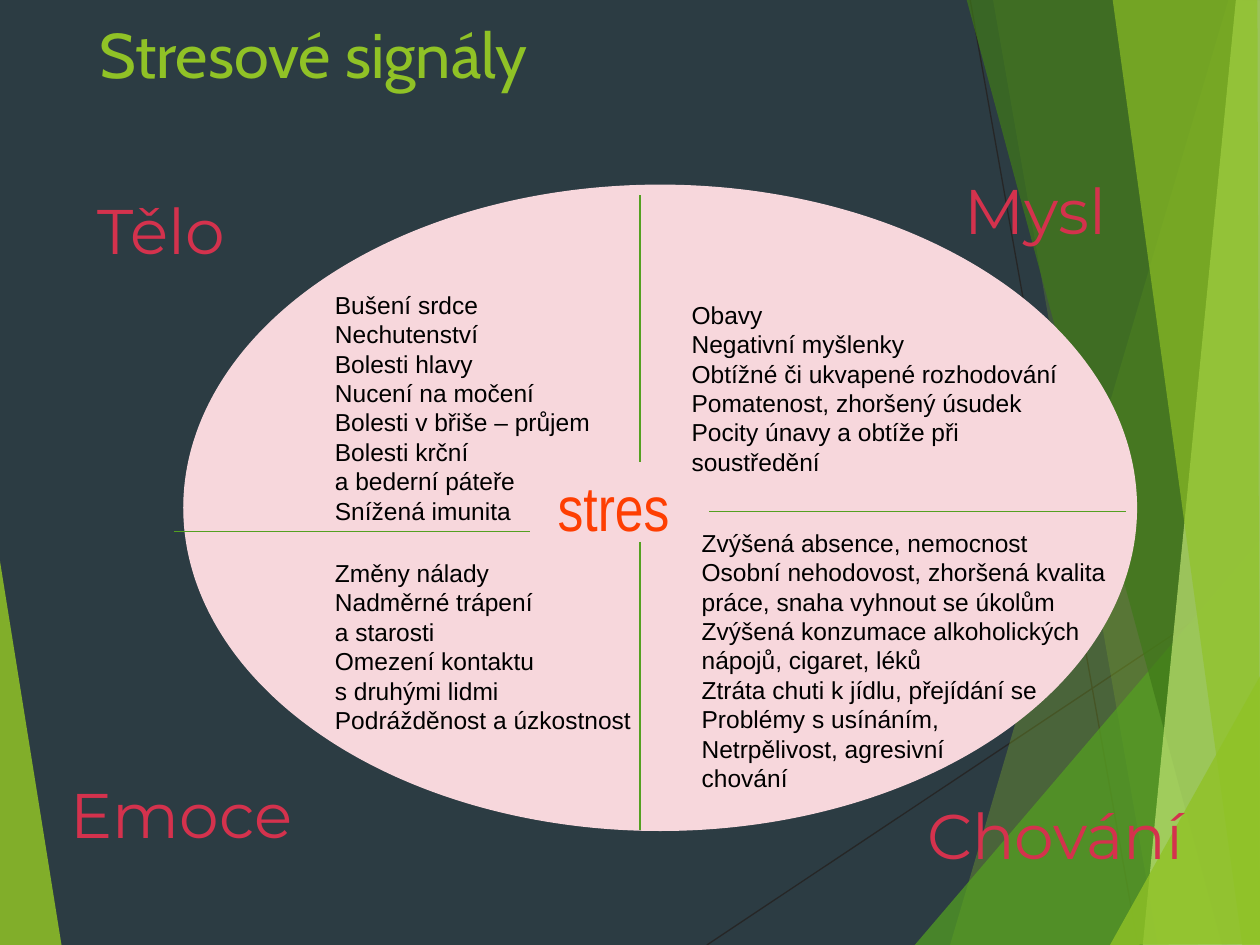
from lxml.etree import SubElement
from pptx import Presentation
from pptx.dml.color import RGBColor
from pptx.enum.shapes import MSO_CONNECTOR, MSO_SHAPE
from pptx.enum.text import MSO_ANCHOR, MSO_AUTO_SIZE, PP_ALIGN
from pptx.oxml.ns import qn
from pptx.util import Inches, Pt


def color(value):
    return RGBColor.from_string(value)


def add_text(text, left, top, width, height, font="Arial", size=14, fill="000000",
             align=PP_ALIGN.LEFT, wrap=False, grow=False):
    """Add a text box with one paragraph for each line of text."""
    box = page.shapes.add_textbox(Inches(left), Inches(top), Inches(width), Inches(height))
    frame = box.text_frame
    frame.word_wrap = wrap
    frame.vertical_anchor = MSO_ANCHOR.TOP
    frame.auto_size = MSO_AUTO_SIZE.SHAPE_TO_FIT_TEXT if grow else MSO_AUTO_SIZE.NONE
    frame.text = text
    for para in frame.paragraphs:
        para.alignment = align
        for span in para.runs:
            span.font.name = font
            span.font.size = Pt(size)
            span.font.color.rgb = color(fill)


deck = Presentation()
deck.slide_width = Inches(10)
deck.slide_height = Inches(7.5)
page = deck.slides.add_slide(deck.slide_layouts[6])
page.background.fill.solid()
page.background.fill.fore_color.rgb = color("2C3C43")

# Each line: start x, start y, end x, end y, colour
background_lines = [
    (5.61, 7.5, 10.01, 4.57, "262626"),
    (7.7, 0, 9.03, 7.5, "262626"),
]
divider_lines = [
    (5.08, 1.55, 5.08, 3.67, "54A021"),
    (5.08, 4.3, 5.08, 6.59, "54A021"),
    (5.63, 4.06, 8.94, 4.06, "54A021"),
    (1.38, 4.22, 4.21, 4.22, "54A021"),
]
# Each facet: colour, opacity in percent, corners
facets = [
    ("90C226", 85, [(-0.01, 4.39), (0.49, 7.51), (-0.01, 7.5)]),
    ("90C226", 30, [(9.75, 0), (7.54, 7.5), (10.02, 7.51), (10.01, 0.01)]),
    ("90C226", 20, [(7.88, -0.01), (9.19, 7.5), (10.01, 7.5), (10.01, -0.01)]),
    ("54A021", 72, [(7.26, 7.5), (10, 4.29), (10.01, 7.5)]),
    ("3F7819", 70, [(7.67, -0.01), (9.7, 7.5), (10.01, 7.49), (10.01, -0.01)]),
    ("C0E474", 70, [(9.81, -0.01), (9.07, 7.5), (10.01, 7.5), (10, -0.01)]),
    ("90C226", 65, [(8.83, -0.01), (9.86, 7.5), (10, 7.5), (9.98, -0.01)]),
    ("90C226", 80, [(8.81, 7.5), (10.01, 5.35), (10.01, 7.49)]),
]


def add_lines(lines):
    for x1, y1, x2, y2, stroke in lines:
        line = page.shapes.add_connector(
            MSO_CONNECTOR.STRAIGHT, Inches(x1), Inches(y1), Inches(x2), Inches(y2))
        line.line.color.rgb = color(stroke)
        line.line.width = Pt(0.75)
        SubElement(line._element.spPr, qn("a:effectLst"))


add_lines(background_lines)
for fill, opacity, corners in facets:
    points = [(Inches(x), Inches(y)) for x, y in corners]
    builder = page.shapes.build_freeform(*points[0])
    builder.add_line_segments(points[1:], close=True)
    facet = builder.convert_to_shape()
    facet.shadow.inherit = False
    facet.line.fill.background()
    facet.fill.solid()
    facet.fill.fore_color.rgb = color(fill)
    solid = facet._element.spPr.find(qn("a:solidFill"))
    SubElement(solid[0], qn("a:alpha"), val=str(opacity * 1000))

add_text("Stresové signály", 0.69, 0.07, 7.79, 1.01,
         font="Cabin", size=36, fill="90C226", wrap=True)

ellipse = page.shapes.add_shape(
    MSO_SHAPE.OVAL, Inches(1.46), Inches(1.47), Inches(7.56), Inches(5.12))
ellipse.shadow.inherit = False
ellipse.fill.solid()
ellipse.fill.fore_color.rgb = color("F7D7DC")
ellipse.line.color.rgb = color("F7D7DC")
ellipse.line.width = Pt(0.75)

add_text("stres", 4.21, 3.67, 1.32, 0.96, font="Arial Narrow", size=36,
         fill="FE3E02", align=PP_ALIGN.CENTER)
add_lines(divider_lines)

for label, left, top, width in [
    ("Mysl", 7.6, 1.31, 1.24),
    ("Chování", 7.28, 6.27, 2.19),
    ("Tělo", 0.35, 1.47, 1.86),
    ("Emoce", 0.51, 6.11, 1.86),
]:
    add_text(label, left, top, width, 0.7, font="Montserrat", size=36,
             fill="D4324D", align=PP_ALIGN.CENTER)

body_signals = """Bušení srdce
Nechutenství
Bolesti hlavy
Nucení na močení
Bolesti v břiše – průjem
Bolesti krční
a bederní páteře
Snížená imunita"""
emotion_signals = """Změny nálady
Nadměrné trápení
a starosti
Omezení kontaktu
s druhými lidmi
Podrážděnost a úzkostnost"""
behaviour_signals = """Zvýšená absence, nemocnost
Osobní nehodovost, zhoršená kvalita
práce, snaha vyhnout se úkolům
Zvýšená konzumace alkoholických
nápojů, cigaret, léků
Ztráta chuti k jídlu, přejídání se
Problémy s usínáním,
Netrpělivost, agresivní
chování"""
mind_signals = """Obavy
Negativní myšlenky
Obtížné či ukvapené rozhodování
Pomatenost, zhoršený úsudek
Pocity únavy a obtíže při
soustředění"""

add_text(body_signals, 2.56, 2.25, 2.24, 1.99, grow=True)
add_text(emotion_signals, 2.56, 4.38, 2.56, 1.75, grow=True)
add_text(behaviour_signals, 5.47, 4.14, 3.48, 2.46, grow=True)
add_text(mind_signals, 5.39, 2.33, 3.12, 1.95, grow=True)

deck.save("out.pptx")
